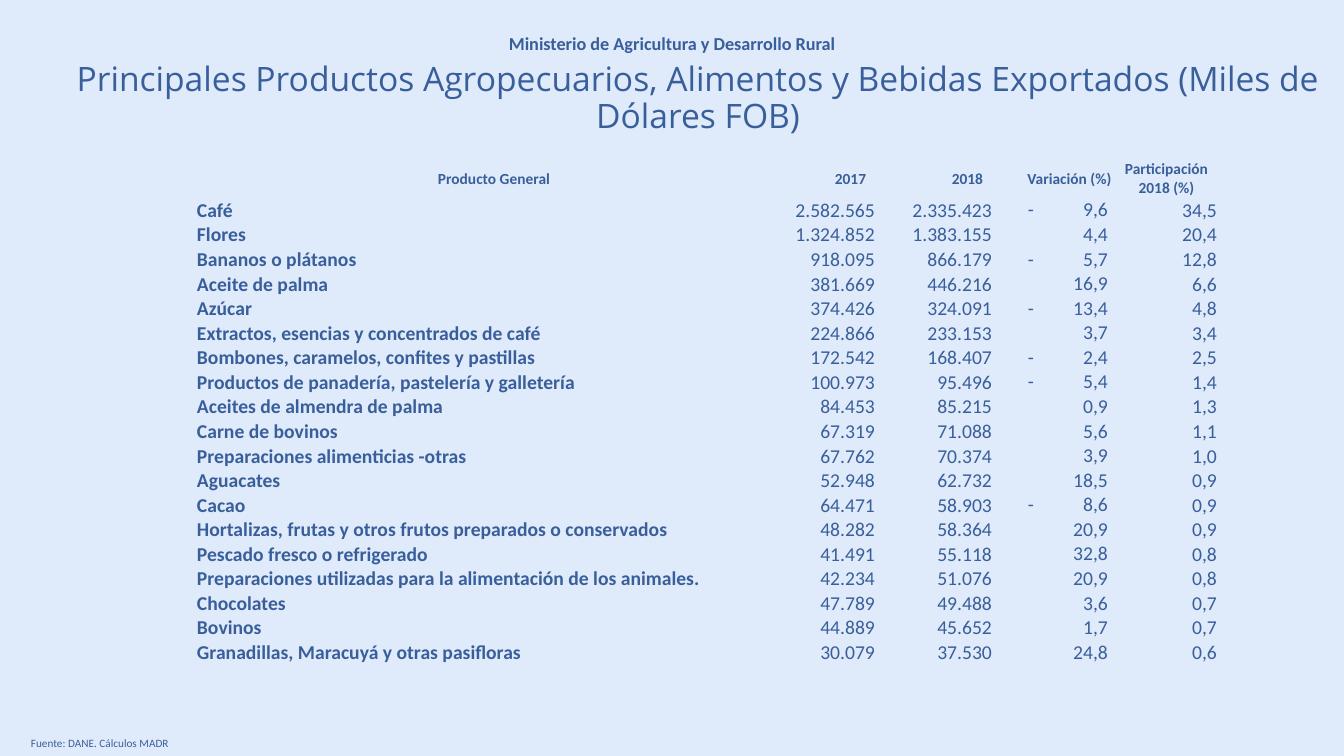
from dataclasses import dataclass

from lxml import etree
from pptx import Presentation
from pptx.dml.color import RGBColor
from pptx.enum.text import MSO_ANCHOR, MSO_AUTO_SIZE, PP_ALIGN
from pptx.oxml.ns import qn
from pptx.util import Pt

LEFT, CENTER, RIGHT, JUSTIFY = PP_ALIGN.LEFT, PP_ALIGN.CENTER, PP_ALIGN.RIGHT, PP_ALIGN.JUSTIFY
MIDDLE, BOTTOM = MSO_ANCHOR.MIDDLE, MSO_ANCHOR.BOTTOM
GROW = MSO_AUTO_SIZE.SHAPE_TO_FIT_TEXT
NO_STYLE_NO_GRID = "{2D5ABB26-0587-4C30-8999-92F81FD0307C}"
EMU_PER_PX = 914400 / 100.8


@dataclass(frozen=True)
class Theme:
    background: RGBColor = RGBColor(0xDF, 0xEA, 0xFB)
    ink: RGBColor = RGBColor(0x39, 0x5F, 0x9B)
    body_font: str = "Calibri"
    title_font: str = "Open Sans"
    ministry_size: int = 13
    title_size: int = 24
    source_size: int = 8
    header_size: int = 11
    row_size: int = 14


THEME = Theme()

HEADERS = ["Producto General", "2017", "2018", "Variación (%)", "Participación 2018 (%)"]
PRODUCTS = [
    ("Café", "2.582.565", "2.335.423", "-9,6", "34,5"),
    ("Flores", "1.324.852", "1.383.155", "4,4", "20,4"),
    ("Bananos o plátanos", "918.095", "866.179", "-5,7", "12,8"),
    ("Aceite de palma", "381.669", "446.216", "16,9", "6,6"),
    ("Azúcar", "374.426", "324.091", "-13,4", "4,8"),
    ("Extractos, esencias y concentrados de café", "224.866", "233.153", "3,7", "3,4"),
    ("Bombones, caramelos, confites y pastillas", "172.542", "168.407", "-2,4", "2,5"),
    ("Productos de panadería, pastelería y galletería", "100.973", "95.496", "-5,4", "1,4"),
    ("Aceites de almendra de palma", "84.453", "85.215", "0,9", "1,3"),
    ("Carne de bovinos", "67.319", "71.088", "5,6", "1,1"),
    ("Preparaciones alimenticias -otras", "67.762", "70.374", "3,9", "1,0"),
    ("Aguacates", "52.948", "62.732", "18,5", "0,9"),
    ("Cacao", "64.471", "58.903", "-8,6", "0,9"),
    ("Hortalizas, frutas y otros frutos preparados o conservados",
     "48.282", "58.364", "20,9", "0,9"),
    ("Pescado fresco o refrigerado", "41.491", "55.118", "32,8", "0,8"),
    ("Preparaciones utilizadas para la alimentación de los animales.",
     "42.234", "51.076", "20,9", "0,8"),
    ("Chocolates", "47.789", "49.488", "3,6", "0,7"),
    ("Bovinos", "44.889", "45.652", "1,7", "0,7"),
    ("Granadillas, Maracuyá y otras pasifloras", "30.079", "37.530", "24,8", "0,6"),
]
# Width, left inset, right inset and alignment of each column
COLUMNS = [(596, 1, 1, LEFT), (117, 1, 34, RIGHT), (117, 1, 34, RIGHT),
           (87, 2, 1, LEFT), (107, 1, 3, RIGHT)]
VARIATION_COLUMN = 3
VARIATION_TAB = 80
HEADER_HEIGHT = 38


def px(length):
    return round(length * EMU_PER_PX)


def add_run(paragraph, text, size, font=THEME.body_font, bold=False):
    run = paragraph.add_run()
    run.text = text
    run.font.size = Pt(size)
    run.font.name = font
    run.font.bold = bold
    run.font.color.rgb = THEME.ink


def add_label(slide, box, text, size, align, font=THEME.body_font,
              bold=False, wrap=True, spacing=1.0):
    frame = slide.shapes.add_textbox(*map(px, box)).text_frame
    frame.word_wrap = wrap
    frame.auto_size = GROW
    paragraph = frame.paragraphs[0]
    paragraph.alignment = align
    paragraph.line_spacing = spacing
    add_run(paragraph, text, size, font, bold)


def add_right_tab(paragraph, position):
    properties = paragraph._p.get_or_add_pPr()
    stops = etree.SubElement(properties, qn("a:tabLst"))
    etree.SubElement(stops, qn("a:tab"), pos=str(px(position)), algn="r")


def fill_cell(cell, text, size, align, anchor, insets=(1, 1), bold=False):
    cell.fill.background()
    cell.margin_left, cell.margin_right = map(px, insets)
    cell.margin_top = cell.margin_bottom = 0
    cell.vertical_anchor = anchor
    paragraph = cell.text_frame.paragraphs[0]
    paragraph.alignment = align
    add_run(paragraph, text, size, bold=bold)
    return paragraph


def add_heading(slide, box):
    left, top, width, height = box
    # Ministry
    add_label(slide, (left + 433, top, 352, 32), "Ministerio de Agricultura y Desarrollo Rural",
              THEME.ministry_size, CENTER, bold=True, wrap=False)
    # Title
    add_label(slide, (left, top + 31, width, height - 31),
              "Principales Productos Agropecuarios, Alimentos y Bebidas Exportados "
              "(Miles de Dólares FOB)",
              THEME.title_size, CENTER, font=THEME.title_font, spacing=0.9)


def add_exports_table(slide, box):
    frame = slide.shapes.add_table(len(PRODUCTS) + 1, len(COLUMNS), *map(px, box))
    exports = frame.table
    exports.first_row = exports.horz_banding = False
    next(frame.element.iter(qn("a:tableStyleId"))).text = NO_STYLE_NO_GRID

    # Column widths and row heights
    for column, (width, *_) in zip(exports.columns, COLUMNS):
        column.width = px(width)
    product_height = (box[3] - HEADER_HEIGHT) / len(PRODUCTS)
    for index, row in enumerate(exports.rows):
        row.height = px(product_height if index else HEADER_HEIGHT)

    # Header row
    for index, header in enumerate(HEADERS):
        fill_cell(exports.cell(0, index), header, THEME.header_size, CENTER, MIDDLE, bold=True)

    # Product rows; the minus sign stays left, the figure sits on a right tab
    for row_index, product in enumerate(PRODUCTS, start=1):
        for index, (value, column) in enumerate(zip(product, COLUMNS)):
            _, inset_left, inset_right, align = column
            is_variation = index == VARIATION_COLUMN
            if is_variation:
                sign = "-" if value.startswith("-") else ""
                value = f"{sign}\t{value.lstrip('-')}"
            paragraph = fill_cell(exports.cell(row_index, index), value, THEME.row_size, align,
                                  MIDDLE if is_variation else BOTTOM,
                                  (inset_left, inset_right), bold=index == 0)
            if is_variation:
                add_right_tab(paragraph, VARIATION_TAB)


def add_source(slide, box):
    add_label(slide, box, "Fuente: DANE. Cálculos MADR", THEME.source_size, JUSTIFY)


def main():
    deck = Presentation()
    deck.slide_width, deck.slide_height = px(1344), px(756)
    slide = deck.slides.add_slide(deck.slide_layouts[6])
    slide.background.fill.solid()
    slide.background.fill.fore_color.rgb = THEME.background

    add_heading(slide, (63, 27, 1270, 123))
    add_source(slide, (21, 731, 1301, 24))
    add_exports_table(slide, (196, 160, 1024, 505))
    deck.save("out.pptx")


if __name__ == "__main__":
    main()
